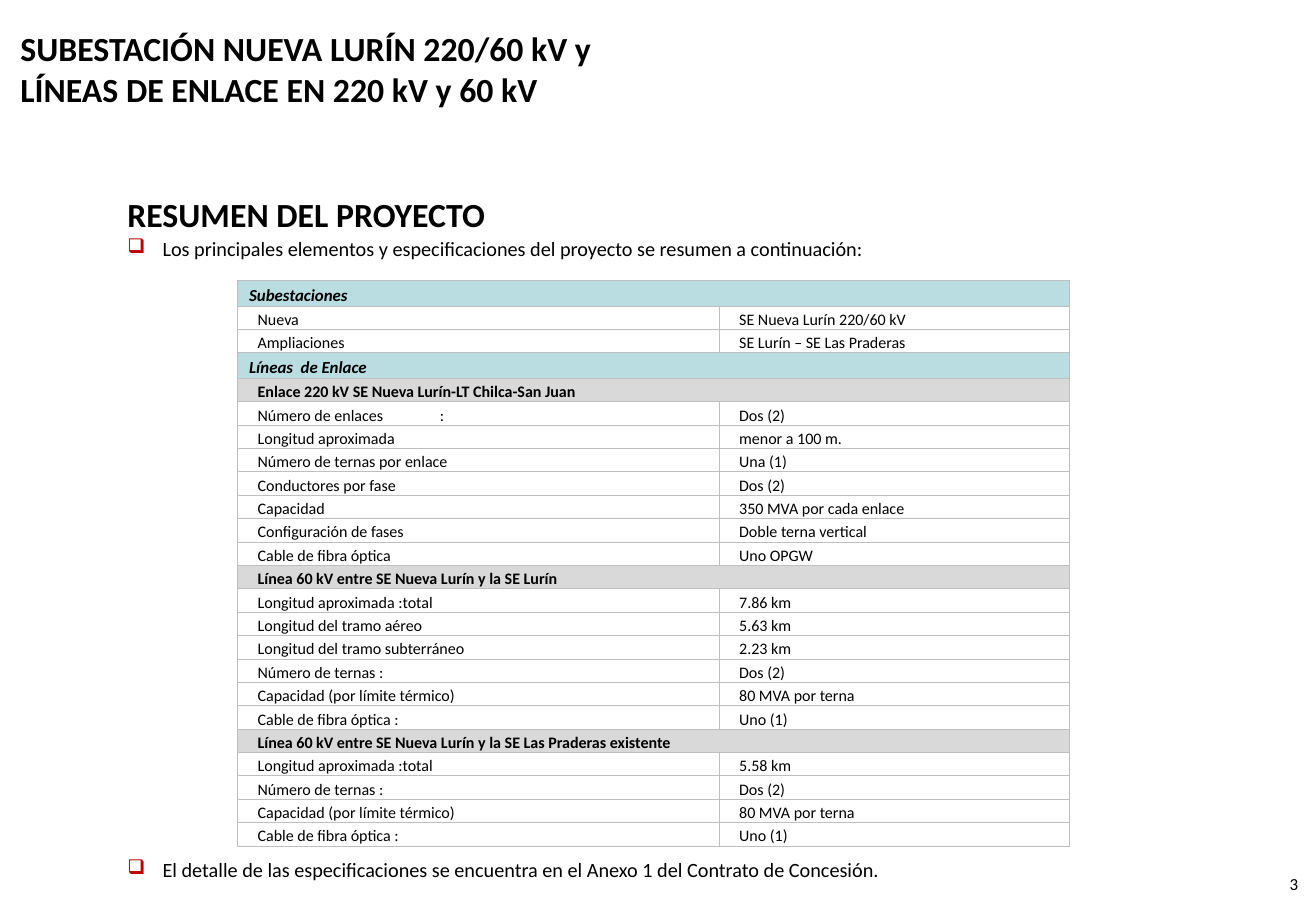
from lxml import etree
from pptx import Presentation
from pptx.dml.color import RGBColor
from pptx.enum.text import MSO_ANCHOR, PP_ALIGN
from pptx.oxml.ns import qn
from pptx.util import Inches, Pt

MIDDLE, TOP = MSO_ANCHOR.MIDDLE, MSO_ANCHOR.TOP
LEFT, RIGHT, JUSTIFY = PP_ALIGN.LEFT, PP_ALIGN.RIGHT, PP_ALIGN.JUSTIFY
WIDTH, HEIGHT = Inches(10.83), Inches(7.5)
FONT, BLACK, BULLET_RED, BORDER_GRAY = "Calibri", "000000", "C00000", "BFBFBF"
BLACK_HEADING = dict(size=20, bold=True)
BULLETED = dict(size=12, align=JUSTIFY, indent=0.29, hanging=-0.29, bullet="❑")

# Boxes are left, top, width and height in percent of the slide.
TEXTS = [
    ("SUBESTACIÓN NUEVA LURÍN 220/60 kV y LÍNEAS DE ENLACE EN 220 kV y 60 kV",
     (-0.28, 2.8, 52.72, 9.47), MIDDLE, dict(indent=0.1, **BLACK_HEADING)),
    ("RESUMEN DEL PROYECTO", (8.77, 19.6, 42.11, 7.73), MIDDLE,
     dict(indent=0.38, hanging=-0.38, **BLACK_HEADING)),
    ("Los principales elementos y especificaciones del proyecto se resumen a continuación:",
     (8.77, 25.33, 65.37, 4.13), TOP, BULLETED),
    ("El detalle de las especificaciones se encuentra en el Anexo 1 del Contrato de Concesión.",
     (8.77, 93.47, 71.28, 3.87), TOP, BULLETED),
    ("3", (94.55, 95.2, 4.99, 4.27), TOP, dict(size=10, align=RIGHT)),
]
TABLE_BOX = (18.01, 30.8, 63.25, 62.1)
COLUMN_SHARES = (0.58, 0.42)
SECTION, GROUP, ITEM = "section", "group", "item"
ROW_STYLES = {
    SECTION: dict(height=2.8, fill="BADDE1", inset=0.01, size=10, bold=True, italic=True),
    GROUP: dict(height=2.57, fill="D9D9D9", inset=0.08, size=9.5, bold=True, italic=False),
    ITEM: dict(height=2.57, fill=None, inset=0.08, size=9.5, bold=False, italic=False),
}
VALUE_INSET = 0.16
ROWS = [
    (SECTION, "Subestaciones"),
    (ITEM, "Nueva", "SE Nueva Lurín 220/60 kV"),
    (ITEM, "Ampliaciones", "SE Lurín – SE Las Praderas"),
    (SECTION, "Líneas  de Enlace"),
    (GROUP, "Enlace 220 kV SE Nueva Lurín-LT Chilca-San Juan"),
    (ITEM, "Número de enlaces\t:", "Dos (2)"),
    (ITEM, "Longitud aproximada", "menor a 100 m."),
    (ITEM, "Número de ternas por enlace", "Una (1)"),
    (ITEM, "Conductores por fase", "Dos (2)"),
    (ITEM, "Capacidad", "350 MVA por cada enlace"),
    (ITEM, "Configuración de fases", "Doble terna vertical"),
    (ITEM, "Cable de fibra óptica", "Uno OPGW"),
    (GROUP, "Línea 60 kV entre SE Nueva Lurín y la SE Lurín"),
    (ITEM, "Longitud aproximada :total", "7.86 km"),
    (ITEM, "Longitud del tramo aéreo", "5.63 km"),
    (ITEM, "Longitud del tramo subterráneo", "2.23 km"),
    (ITEM, "Número de ternas :", "Dos (2)"),
    (ITEM, "Capacidad (por límite térmico)", "80 MVA por terna"),
    (ITEM, "Cable de fibra óptica :", "Uno (1)"),
    (GROUP, "Línea 60 kV entre SE Nueva Lurín y la SE Las Praderas existente"),
    (ITEM, "Longitud aproximada :total", "5.58 km"),
    (ITEM, "Número de ternas :", "Dos (2)"),
    (ITEM, "Capacidad (por límite térmico)", "80 MVA por terna"),
    (ITEM, "Cable de fibra óptica :", "Uno (1)"),
]


def color(value):
    return RGBColor.from_string(value)


def place(box):
    return [int(share * side / 100) for share, side in zip(box, (WIDTH, HEIGHT) * 2)]


def write(frame, text, size=10, bold=False, italic=False, align=LEFT, indent=0,
          hanging=0, bullet=None, line_spacing=None):
    paragraph = frame.paragraphs[0]
    properties = paragraph._p.get_or_add_pPr()
    properties.set("marL", str(Inches(indent)))
    properties.set("indent", str(Inches(hanging)))
    if bullet:
        bullet_color = etree.SubElement(properties, qn("a:buClr"))
        etree.SubElement(bullet_color, qn("a:srgbClr"), val=BULLET_RED)
        etree.SubElement(properties, qn("a:buChar"), char=bullet)
    paragraph.alignment = align
    if line_spacing:
        paragraph.line_spacing = line_spacing
    run = paragraph.add_run()
    run.text = text
    font = run.font
    font.name, font.size, font.bold, font.italic = FONT, Pt(size), bold, italic
    font.color.rgb = color(BLACK)


def style_cell(cell, fill, inset):
    cell.vertical_anchor = MIDDLE
    cell.margin_left = Inches(inset)
    cell.margin_top = cell.margin_right = Inches(0.01)
    cell.margin_bottom = 0
    properties = cell._tc.get_or_add_tcPr()
    for side in ("a:lnL", "a:lnR", "a:lnT", "a:lnB"):
        line = etree.SubElement(properties, qn(side), w=str(Pt(0.5)))
        solid = etree.SubElement(line, qn("a:solidFill"))
        etree.SubElement(solid, qn("a:srgbClr"), val=BORDER_GRAY)
    if fill:
        cell.fill.solid()
        cell.fill.fore_color.rgb = color(fill)
    else:
        cell.fill.background()


def add_summary(slide):
    box = place(TABLE_BOX)
    table = slide.shapes.add_table(len(ROWS), len(COLUMN_SHARES), *box).table
    table.first_row = table.horz_banding = False
    for column, share in zip(table.columns, COLUMN_SHARES):
        column.width = int(box[2] * share)
    for index, (kind, *texts) in enumerate(ROWS):
        style = dict(ROW_STYLES[kind])
        fill, inset = style.pop("fill"), style.pop("inset")
        table.rows[index].height = int(HEIGHT * style.pop("height") / 100)
        label, value = table.cell(index, 0), table.cell(index, 1)
        style_cell(label, fill, inset)
        style_cell(value, fill, VALUE_INSET)
        if len(texts) == 1:
            label.merge(value)
        for cell, text, indent in zip((label, value), texts, (0.09, 0)):
            write(cell.text_frame, text, indent=indent, line_spacing=1.15, **style)


def main():
    """Build the project summary slide."""
    presentation = Presentation()
    presentation.slide_width, presentation.slide_height = WIDTH, HEIGHT
    slide = presentation.slides.add_slide(presentation.slide_layouts[6])
    for text, box, anchor, text_format in TEXTS:
        frame = slide.shapes.add_textbox(*place(box)).text_frame
        frame.word_wrap = True
        frame.vertical_anchor = anchor
        write(frame, text, **text_format)
    add_summary(slide)
    presentation.save("out.pptx")


if __name__ == "__main__":
    main()
